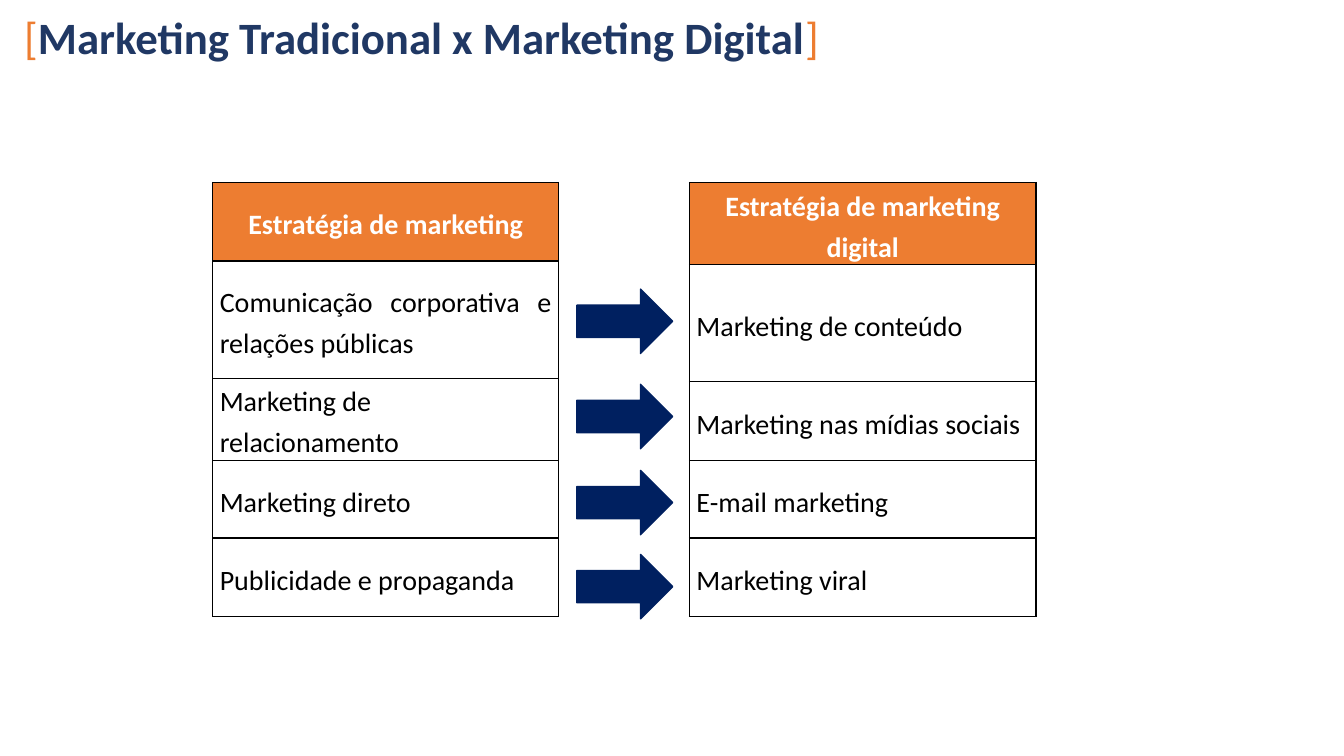
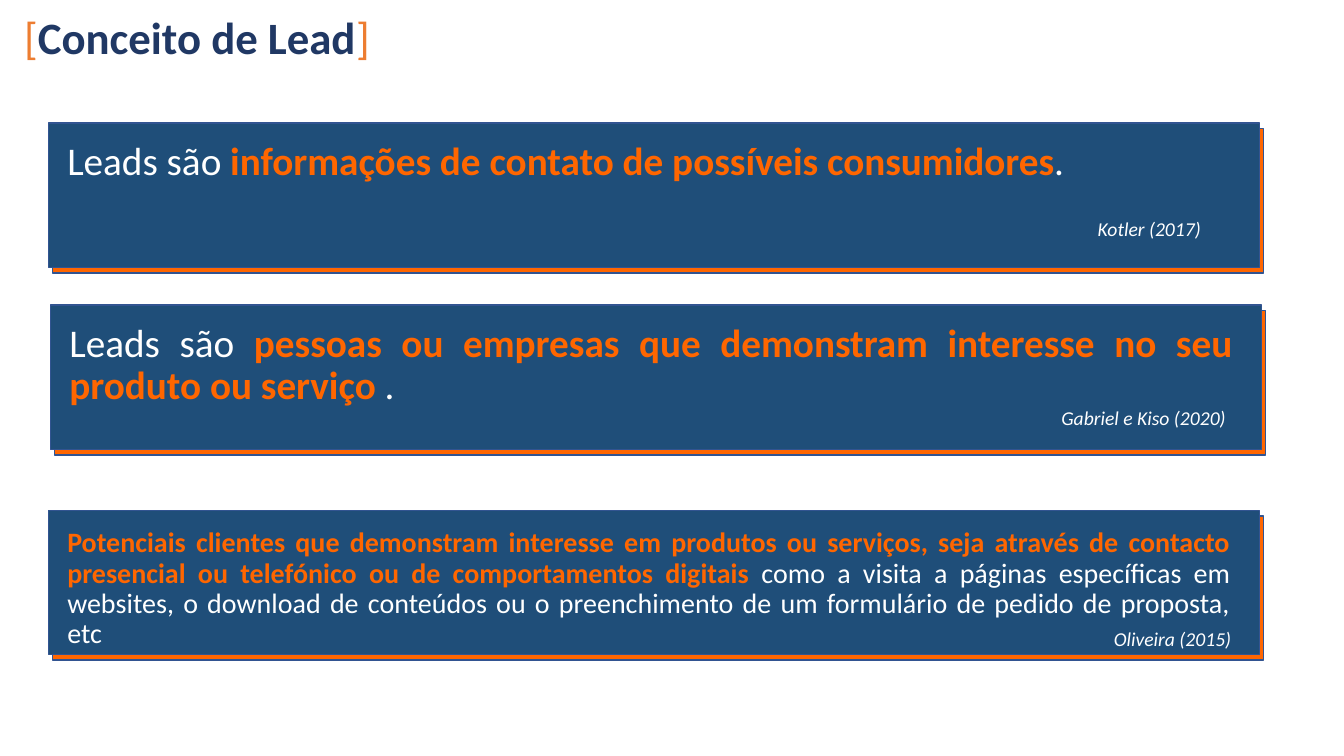
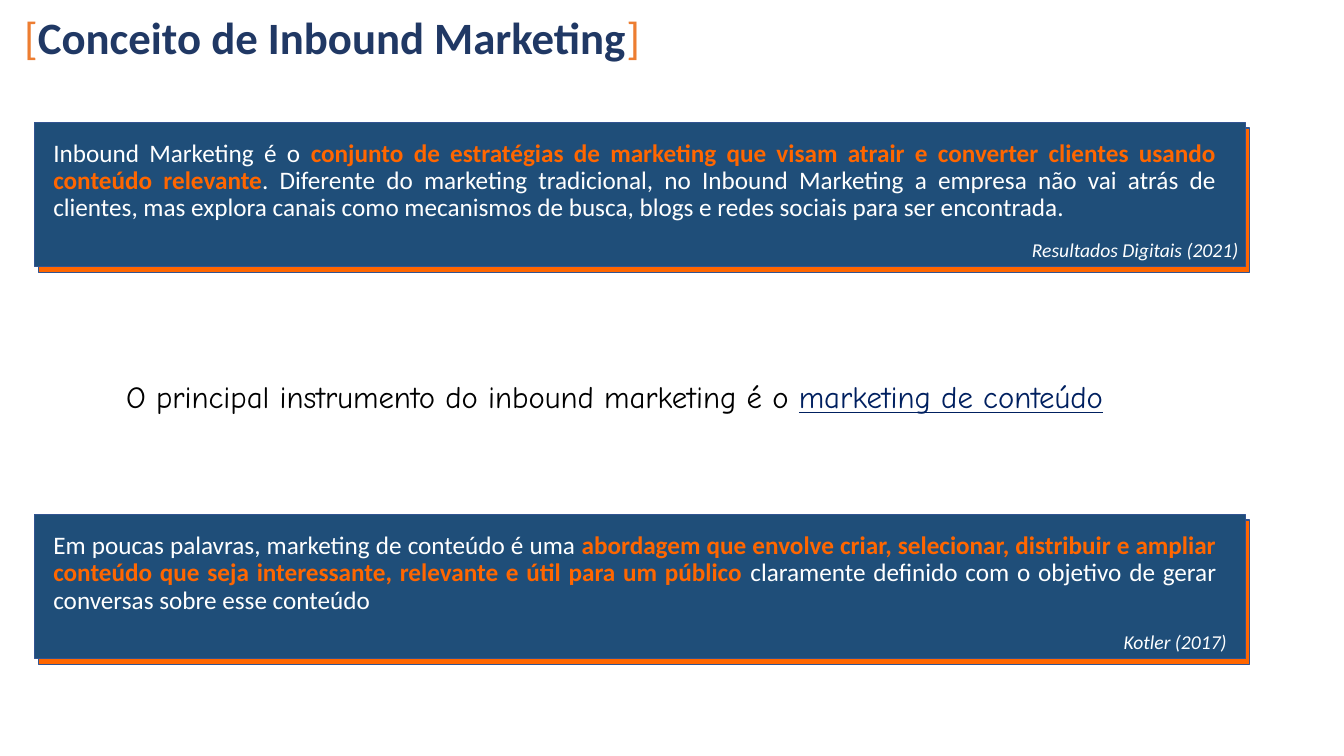
from lxml.etree import SubElement
from pptx import Presentation
from pptx.dml.color import RGBColor
from pptx.enum.shapes import MSO_SHAPE
from pptx.enum.text import MSO_ANCHOR, PP_ALIGN
from pptx.oxml.ns import qn
from pptx.util import Pt

WHITE = RGBColor(0xFF, 0xFF, 0xFF)
BLACK = RGBColor(0x00, 0x00, 0x00)
ORANGE = RGBColor(0xED, 0x7D, 0x31)
VIVID = RGBColor(0xFF, 0x66, 0x00)
TITLE_BLUE = RGBColor(0x20, 0x38, 0x64)
NAVY = RGBColor(0x00, 0x20, 0x60)
CARD_BLUE = RGBColor(0x1F, 0x4E, 0x79)
OUTLINE = RGBColor(0x32, 0x54, 0x91)
FONT = "Calibri"
ACCENT_FONT = "Comic Neue"


def add_run(p, text, size, color, bold=False, italic=False, underline=False, font=FONT):
    r = p.add_run()
    r.text = text
    f = r.font
    f.name, f.size = font, Pt(size)
    f.bold, f.italic, f.underline = bold, italic, underline
    f.color.rgb = color


def add_shape(s, kind, left, top, width, height, fill, line):
    sp = s.shapes.add_shape(kind, Pt(left), Pt(top), Pt(width), Pt(height))
    sp.shadow.inherit = False
    sp.fill.solid()
    sp.fill.fore_color.rgb = fill
    sp.line.color.rgb = line
    sp.line.width = Pt(1)


def add_text(s, left, top, width, height, align=PP_ALIGN.LEFT, spacing=1.0):
    tf = s.shapes.add_textbox(Pt(left), Pt(top), Pt(width), Pt(height)).text_frame
    tf.word_wrap = True
    p = tf.paragraphs[0]
    p.alignment = align
    p.line_spacing = spacing
    return p


def add_titled_slide(prs, title):
    s = prs.slides.add_slide(prs.slide_layouts[5])
    sp = s.shapes.title
    sp.left, sp.top, sp.width, sp.height = Pt(10), Pt(3.6), Pt(681), Pt(46)
    tf = sp.text_frame
    tf.word_wrap = True
    tf.vertical_anchor = MSO_ANCHOR.TOP
    p = tf.paragraphs[0]
    p.alignment = PP_ALIGN.LEFT
    add_run(p, "[", 32, ORANGE)
    add_run(p, title, 32, TITLE_BLUE, bold=True)
    add_run(p, "]", 32, ORANGE)
    return s


def set_borders(cell):
    tcPr = cell._tc.get_or_add_tcPr()
    for side in ("a:lnL", "a:lnR", "a:lnT", "a:lnB"):
        ln = SubElement(tcPr, qn(side), w=str(Pt(1)))
        fill = SubElement(ln, qn("a:solidFill"))
        SubElement(fill, qn("a:srgbClr"), val=str(BLACK))


def add_strategy_table(s, left, top, width, texts, ragged=()):
    heights = (56.2, 83.6, 56.2, 55.4, 56.2)
    table = s.shapes.add_table(len(texts), 1, Pt(left), Pt(top), Pt(width), Pt(sum(heights))).table
    table.horz_banding = False
    table.columns[0].width = Pt(width)
    for i, (text, height) in enumerate(zip(texts, heights)):
        header = i == 0
        table.rows[i].height = Pt(height)
        cell = table.cell(i, 0)
        cell.margin_left = cell.margin_right = Pt(5)
        cell.margin_top = cell.margin_bottom = Pt(0)
        cell.vertical_anchor = MSO_ANCHOR.MIDDLE
        set_borders(cell)
        cell.fill.solid()
        cell.fill.fore_color.rgb = ORANGE if header else WHITE
        p = cell.text_frame.paragraphs[0]
        p.line_spacing = 1.2
        if header:
            p.alignment = PP_ALIGN.CENTER
        else:
            p.alignment = PP_ALIGN.LEFT if i in ragged else PP_ALIGN.JUSTIFY
        add_run(p, text, 20, WHITE if header else BLACK, bold=header)


def add_quote_card(s, left, top, size, parts, source, source_dx, source_dy):
    width, height = 865, 103
    for offset_x, offset_y, fill in ((3, 4, VIVID), (0, 0, CARD_BLUE)):
        add_shape(s, MSO_SHAPE.RECTANGLE, left + offset_x, top + offset_y,
                  width, height, fill, OUTLINE)
    p = add_text(s, left + 6.5, top + 9.5, 845, 70, PP_ALIGN.JUSTIFY, 0.9)
    for text, strong in parts:
        add_run(p, text, size, VIVID if strong else WHITE, bold=strong)
    p = add_text(s, left + source_dx, top + source_dy, 163, 22, spacing=0.9)
    add_run(p, source, 14, WHITE, italic=True)


def build_comparison(prs):
    s = add_titled_slide(prs, "Marketing Tradicional x Marketing Digital")
    add_strategy_table(s, 152, 130.3, 247, (
        "Estratégia de marketing",
        "Comunicação corporativa e relações públicas",
        "Marketing de relacionamento",
        "Marketing direto",
        "Publicidade e propaganda",
    ), ragged=(2,))
    add_strategy_table(s, 492.5, 130.3, 247.5, (
        "Estratégia de marketing digital",
        "Marketing de conteúdo",
        "Marketing nas mídias sociais",
        "E-mail marketing",
        "Marketing viral",
    ))
    for top in (206.5, 274.5, 336, 396):
        add_shape(s, MSO_SHAPE.RIGHT_ARROW, 412, top, 68.5, 46, NAVY, NAVY)


def build_lead(prs):
    s = add_titled_slide(prs, "Conceito de Lead")
    add_quote_card(s, 34.5, 88, 28, (
        ("Leads são ", False),
        ("informações de contato de possíveis consumidores", True),
        (".", False),
    ), "Kotler (2017)", 742.5, 65.5)
    add_quote_card(s, 36, 218, 28, (
        ("Leads são ", False),
        ("pessoas ou empresas que demonstram interesse no seu produto ou serviço ", True),
        (".", False),
    ), "Gabriel e Kiso (2020)", 715, 70)
    add_quote_card(s, 34.5, 364.5, 20, (
        ("Potenciais clientes que demonstram interesse em produtos ou serviços, seja através "
         "de contacto presencial ou telefónico ou de comportamentos digitais ", True),
        ("como a visita a páginas específicas em websites, o download de conteúdos ou o "
         "preenchimento de um formulário de pedido de proposta, etc", False),
    ), "Oliveira (2015)", 754, 82)


def build_inbound(prs):
    s = add_titled_slide(prs, "Conceito de Inbound Marketing")
    add_quote_card(s, 24.5, 87.5, 18, (
        ("Inbound Marketing é o ", False),
        ("conjunto de estratégias de marketing que visam atrair e converter clientes "
         "usando conteúdo relevante", True),
        (". Diferente do marketing tradicional, no Inbound Marketing a empresa não vai atrás "
         "de clientes, mas explora canais como mecanismos de busca, blogs e redes sociais "
         "para ser encontrada.", False),
    ), "Resultados Digitais (2021)", 705.5, 80.5)
    p = add_text(s, 83, 266.5, 770, 34)
    add_run(p, "O principal instrumento do inbound marketing é o ", 22, BLACK, font=ACCENT_FONT)
    add_run(p, "marketing de conteúdo", 22, NAVY, underline=True, font=ACCENT_FONT)
    add_quote_card(s, 24.5, 367.5, 18, (
        ("Em poucas palavras, marketing de conteúdo é uma ", False),
        ("abordagem que envolve criar, selecionar, distribuir e ampliar conteúdo que seja "
         "interessante, relevante e útil para um público ", True),
        ("claramente definido com o objetivo de gerar conversas sobre esse conteúdo", False),
    ), "Kotler (2017)", 771, 80.5)


def main():
    prs = Presentation()
    prs.slide_width, prs.slide_height = Pt(960), Pt(540)
    build_comparison(prs)
    build_lead(prs)
    build_inbound(prs)
    prs.save("out.pptx")


if __name__ == "__main__":
    main()
